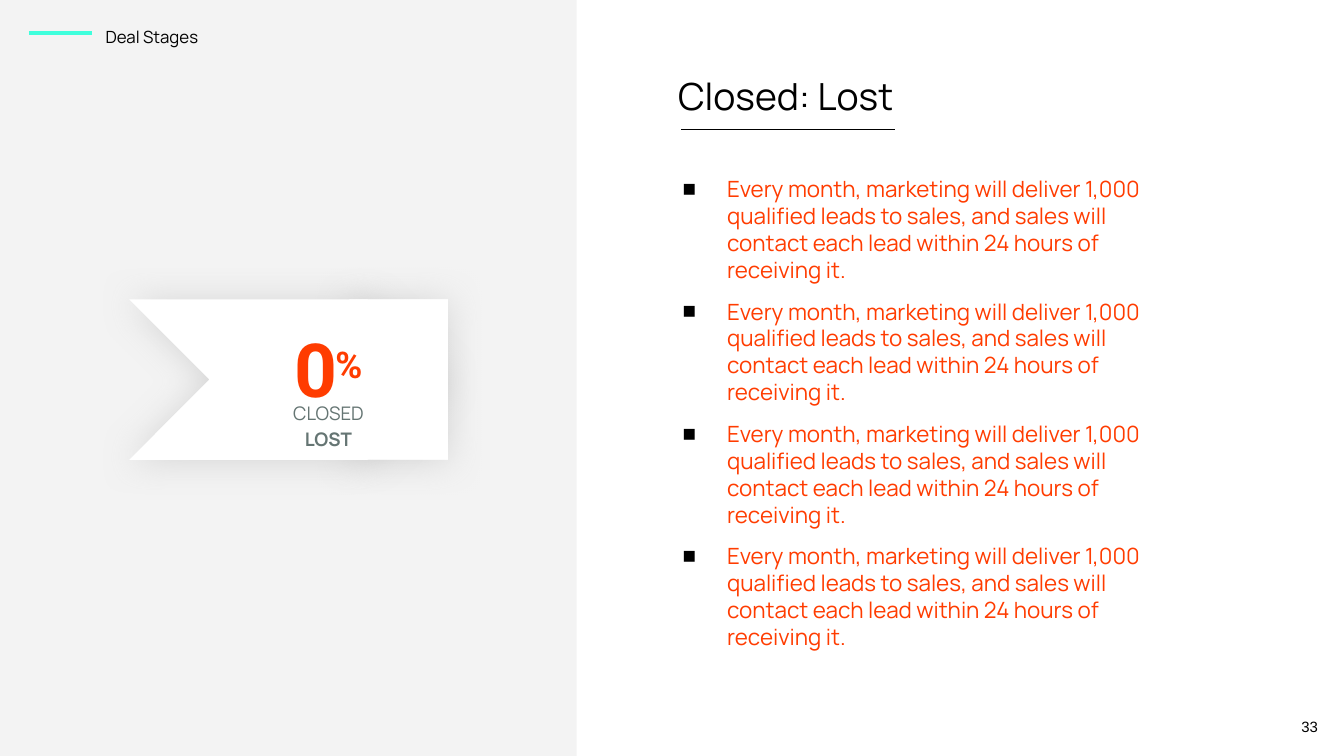
"""Build the "Closed: Lost" deal stage slide."""
from dataclasses import dataclass, field

from lxml import etree
from pptx import Presentation
from pptx.dml.color import RGBColor
from pptx.enum.shapes import MSO_CONNECTOR, MSO_SHAPE
from pptx.enum.text import MSO_ANCHOR, MSO_AUTO_SIZE, PP_ALIGN
from pptx.oxml.ns import qn
from pptx.util import Inches, Pt

RECTANGLE, CHEVRON = MSO_SHAPE.RECTANGLE, MSO_SHAPE.CHEVRON
STRAIGHT = MSO_CONNECTOR.STRAIGHT
TOP, MIDDLE = MSO_ANCHOR.TOP, MSO_ANCHOR.MIDDLE
LEFT, CENTER, RIGHT = PP_ALIGN.LEFT, PP_ALIGN.CENTER, PP_ALIGN.RIGHT
FIXED = MSO_AUTO_SIZE.NONE

CELL = 0.1
COLUMNS, ROWS = 100, 56.25
COMPARISON_LAYOUT = 4
COLORS = {
    "white": "FFFFFF",
    "black": "000000",
    "panel": "F3F3F3",
    "mint": "3FFFDC",
    "orange": "FF3C00",
    "slate": "657573",
    "shadow": "B7B7B7",
}
PROMISE = (
    "Every month, marketing will deliver 1,000 qualified leads to sales, "
    "and sales will contact each lead within 24 hours of receiving it."
)


@dataclass(frozen=True)
class Area:
    """A place on the grid, in columns and rows."""
    left: float
    top: float
    width: float
    height: float

    def lengths(self) -> list:
        return [grid(value) for value in (self.left, self.top, self.width, self.height)]


@dataclass(frozen=True)
class Span:
    """A piece of text with one look."""
    text: str
    size: float
    color: str = "black"
    name: str = "Manrope"
    bold: bool = False
    baseline: int = 0
    breaks: bool = False


@dataclass(frozen=True)
class Block:
    """Paragraphs of spans that fill one area."""
    area: Area
    paragraphs: list
    bullet: str = ""
    anchor: int = TOP
    format: dict = field(default_factory=dict)


@dataclass(frozen=True)
class Rule:
    """A horizontal line."""
    start: float
    end: float
    row: float
    color: str
    weight: float


def grid(cells: float) -> int:
    """Turn grid cells into a length."""
    return Inches(cells * CELL)


def paint(target, color: str) -> None:
    """Give a fill or line format a solid colour."""
    target.solid()
    target.fore_color.rgb = RGBColor.from_string(COLORS[color])


def draw_shape(shapes, kind: int, area: Area, color: str, shadow: bool = False):
    """Draw a plain filled shape, with a soft shadow on request."""
    shape = shapes.add_shape(kind, *area.lengths())
    paint(shape.fill, color)
    shape.line.fill.background()
    shape.shadow.inherit = False
    if shadow:
        effects = shape.element.spPr.find(qn("a:effectLst"))
        outer = etree.SubElement(
            effects, qn("a:outerShdw"), blurRad=str(Pt(19.1)), dist=str(Pt(0.8)),
            dir="5400000", algn="bl", rotWithShape="0")
        tone = etree.SubElement(outer, qn("a:srgbClr"), val=COLORS["shadow"])
        etree.SubElement(tone, qn("a:alpha"), val="50000")
    return shape


def draw_rule(page, rule: Rule) -> None:
    """Draw a horizontal line without a shadow."""
    row = grid(rule.row)
    line = page.shapes.add_connector(STRAIGHT, grid(rule.start), row, grid(rule.end), row)
    paint(line.line.fill, rule.color)
    line.line.width = Pt(rule.weight)
    etree.SubElement(line.element.spPr, qn("a:effectLst"))


def set_bullet(para, bullet: str) -> None:
    """Set the indents and the bullet of a paragraph."""
    properties = para._p.get_or_add_pPr()
    properties.set("marL", str(Inches(0.5) if bullet else 0))
    properties.set("indent", str(Inches(-0.33) if bullet else 0))
    if bullet:
        tone = etree.SubElement(properties, qn("a:buClr"))
        etree.SubElement(tone, qn("a:srgbClr"), val=COLORS["black"])
        etree.SubElement(properties, qn("a:buFont"), typeface="Arial")
        etree.SubElement(properties, qn("a:buChar"), char=bullet)
    else:
        etree.SubElement(properties, qn("a:buNone"))


def add_span(para, span: Span) -> None:
    """Add a formatted run to a paragraph."""
    run = para.add_run()
    run.text = span.text
    for key, value in {"name": span.name, "size": Pt(span.size), "bold": span.bold}.items():
        setattr(run.font, key, value)
    run.font.color.rgb = RGBColor.from_string(COLORS[span.color])
    if span.baseline:
        run.font._element.set("baseline", str(span.baseline * 1000))
    if span.breaks:
        para.add_line_break()


def fill_box(box, block: Block) -> None:
    """Place a box in front of the others and write its text."""
    box.left, box.top, box.width, box.height = block.area.lengths()
    box.element.getparent().append(box.element)
    frame = box.text_frame
    layout = {"word_wrap": True, "auto_size": FIXED, "vertical_anchor": block.anchor}
    layout |= {f"margin_{side}": grid(1) for side in ("left", "top", "right", "bottom")}
    for key, value in layout.items():
        setattr(frame, key, value)
    for index, spans in enumerate(block.paragraphs):
        para = frame.add_paragraph() if index else frame.paragraphs[0]
        set_bullet(para, block.bullet)
        look = {"alignment": LEFT, "line_spacing": 1.0, "space_after": Pt(0),
                "space_before": Pt(8 if index else 0)} | block.format
        for key, value in look.items():
            setattr(para, key, value)
        for span in spans:
            add_span(para, span)


def main() -> None:
    """Build and save the deck."""
    deck = Presentation()
    deck.slide_width, deck.slide_height = grid(COLUMNS), grid(ROWS)
    page = deck.slides.add_slide(deck.slide_layouts[COMPARISON_LAYOUT])

    draw_shape(page.shapes, RECTANGLE, Area(0, 0, 42.9, ROWS), "panel")
    for rule in (Rule(2.15, 6.85, 2.45, "mint", 2.25), Rule(50.7, 66.6, 9.65, "black", 0.75)):
        draw_rule(page, rule)

    flag, flag_end = Area(9.62, 22.27, 23.7, 11.94), Area(26, 22.27, 7.32, 11.94)
    group = page.shapes.add_group_shape()
    draw_shape(group.shapes, RECTANGLE, flag_end, "white", shadow=True)
    chevron = draw_shape(group.shapes, CHEVRON, flag, "white", shadow=True)
    chevron.adjustments[0] = 0.5
    draw_shape(page.shapes, RECTANGLE, flag_end, "white")

    loose, centered = {"line_spacing": 1.15}, {"line_spacing": 1.15, "alignment": CENTER}
    blocks = [
        Block(Area(49.45, 4.45, 38.9, 4.3), [[Span("Closed: Lost", 20)]]),
        Block(Area(6.85, 0.75, 40.3, 3.2), [[Span("Deal Stages", 9)]], format=loose),
        Block(Area(48.1, 12.04, 40.3, 31.6), [[Span(PROMISE, 12, "orange")]] * 4, bullet="■"),
        Block(Area(15.54, 28.65, 17.8, 4.3),
              [[Span("CLOSED", 10, "slate", breaks=True), Span("LOST", 10, "slate", bold=True)]],
              format=centered),
        Block(Area(15.54, 22.05, 17.8, 6.7),
              [[Span("0", 40, "orange", "Roboto Slab", True),
                Span("%", 34, "orange", "Roboto Slab", True, baseline=30)]],
              format=centered),
    ]
    for box, block in zip(list(page.placeholders), blocks):
        fill_box(box, block)

    number = Block(Area(93.05, 51.94, 6, 4.3), [[Span("33", 8, name="Arial")]],
                   anchor=MIDDLE, format={"alignment": RIGHT})
    fill_box(page.shapes.add_textbox(*number.area.lengths()), number)
    deck.save("out.pptx")


if __name__ == "__main__":
    main()
